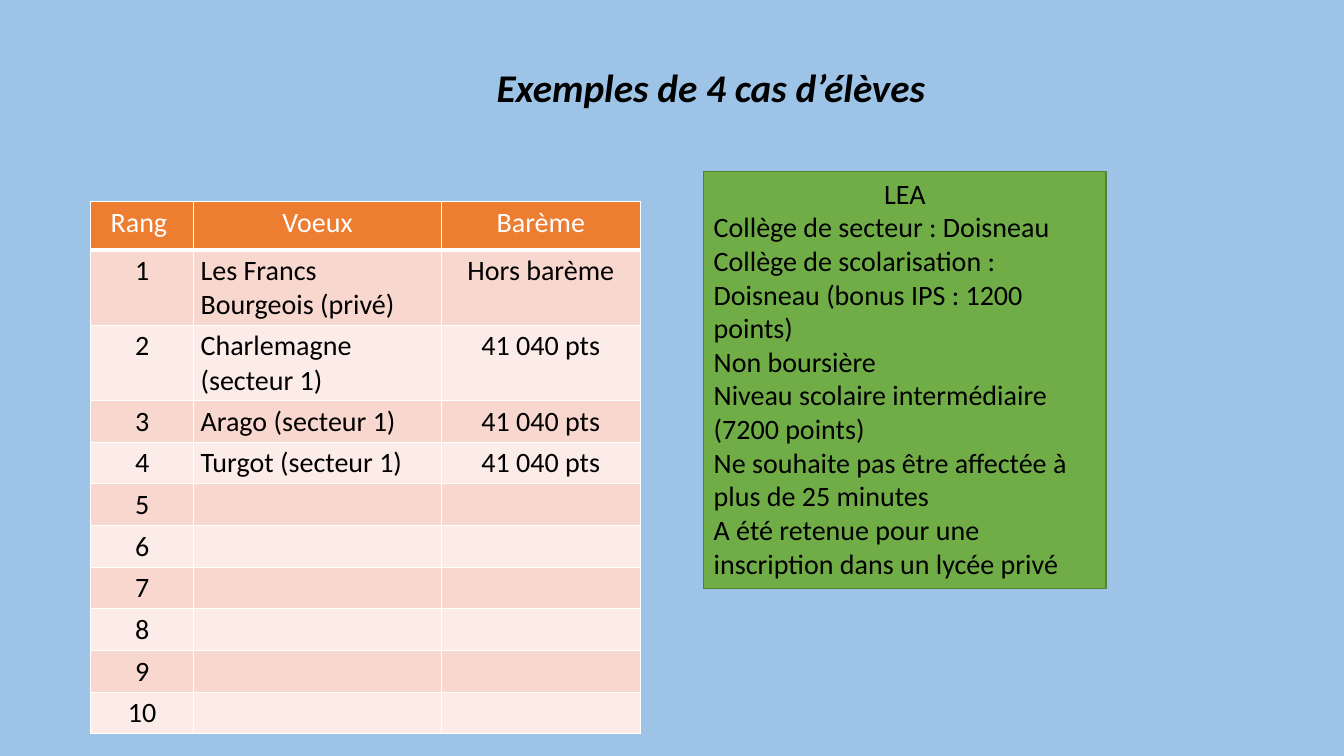
from lxml import etree
from pptx import Presentation
from pptx.dml.color import RGBColor
from pptx.enum.shapes import MSO_SHAPE as Shape
from pptx.enum.text import MSO_ANCHOR as Anchor, PP_ALIGN as Align
from pptx.oxml.ns import qn
from pptx.util import Inches, Pt

# Content
TITLE = "Exemples de 4 cas d’élèves"
HEADER = ("Rang ", "Voeux", "Barème")
WISHES = [
    ("Les Francs Bourgeois (privé)", "Hors barème"),
    ("Charlemagne (secteur 1)", "41 040 pts"),
    ("Arago (secteur 1)", "41 040 pts"),
    ("Turgot (secteur 1)", "41 040 pts"),
]
RANKS = 10
PUPIL = "LEA"
PROFILE = [
    "Collège de secteur : Doisneau",
    "Collège de scolarisation : Doisneau (bonus IPS : 1200 points)",
    "Non boursière",
    "Niveau scolaire intermédiaire (7200 points)",
    "Ne souhaite pas être affectée à plus de 25 minutes",
    "A été retenue pour une inscription dans un lycée privé",
]

# Formats
COLORS = {
    "page": "9DC3E6", "text": "000000", "header_text": "FFFFFF",
    "header": "ED7D31", "odd": "F8D7CE", "even": "FCECE8",
    "border": "FFFFFF", "card": "70AD47", "card_line": "538035",
}
BODY = {"name": "Calibri", "size": Pt(20), "bold": False}
HEADING = {"name": "Calibri", "size": Pt(28), "bold": True, "italic": True}
CELL = {
    "margin_left": Inches(0.07), "margin_right": Inches(0.07),
    "margin_top": Inches(0.04), "margin_bottom": Inches(0.04),
}
COLUMN_WIDTHS = (1.02, 2.46, 1.97)
HEADER_HEIGHT, LINE_HEIGHT = 0.48, 0.31


def color(name):
    return RGBColor.from_string(COLORS[name])


def apply(target, formats):
    for name, value in formats.items():
        setattr(target, name, value)


def write(para, text, formats, align, ink="text"):
    para.alignment = align
    apply(para.font, formats)
    para.font.color.rgb = color(ink)
    if text:
        span = para.add_run()
        span.text = text
        apply(span.font, formats)
        span.font.color.rgb = color(ink)


def add_borders(cell, bottom_width):
    props = cell._tc.get_or_add_tcPr()
    for side, width in (("L", 1), ("R", 1), ("T", 1), ("B", bottom_width)):
        line = etree.SubElement(props, qn(f"a:ln{side}"), w=str(Pt(width)))
        fill = etree.SubElement(line, qn("a:solidFill"))
        etree.SubElement(fill, qn("a:srgbClr"), val=COLORS["border"])


deck = Presentation()
deck.slide_width, deck.slide_height = Inches(13.33), Inches(7.5)
page = deck.slides.add_slide(deck.slide_layouts[6])
page.background.fill.solid()
page.background.fill.fore_color.rgb = color("page")

# Title
title = page.shapes.add_textbox(Inches(3.12), Inches(0.56), Inches(7.86), Inches(0.67))
title.text_frame.word_wrap = True
title.text_frame.vertical_anchor = Anchor.MIDDLE
heading = title.text_frame.paragraphs[0]
heading.line_spacing = 0.9
write(heading, TITLE, HEADING, Align.CENTER)

# Pupil card
card = page.shapes.add_shape(
    Shape.RECTANGLE, Inches(6.98), Inches(1.7), Inches(3.99), Inches(4.14))
card.shadow.inherit = False
card.fill.solid()
card.fill.fore_color.rgb = color("card")
card.line.color.rgb = color("card_line")
card.line.width = Pt(1)
frame = card.text_frame
frame.word_wrap = True
frame.vertical_anchor = Anchor.TOP
write(frame.paragraphs[0], PUPIL, BODY, Align.CENTER)
for fact in PROFILE:
    write(frame.add_paragraph(), fact, BODY, Align.LEFT)

# Table of wishes: ranks without a wish stay blank
blanks = [("", "")] * (RANKS - len(WISHES))
rows = [HEADER] + [(str(rank), *wish) for rank, wish in enumerate(WISHES + blanks, 1)]
table = page.shapes.add_table(
    len(rows), len(HEADER), Inches(0.9), Inches(2),
    Inches(sum(COLUMN_WIDTHS)), Inches(HEADER_HEIGHT + RANKS * LINE_HEIGHT)).table
for column, width in zip(table.columns, COLUMN_WIDTHS):
    column.width = Inches(width)
for r, values in enumerate(rows):
    table.rows[r].height = Inches(LINE_HEIGHT if r else HEADER_HEIGHT)
    band = ("odd" if r % 2 else "even") if r else "header"
    for c, value in enumerate(values):
        cell = table.cell(r, c)
        apply(cell, CELL)
        add_borders(cell, 1 if r else 3)
        cell.fill.solid()
        cell.fill.fore_color.rgb = color(band)
        align = Align.LEFT if r and c == 1 else Align.CENTER
        write(cell.text_frame.paragraphs[0], value, BODY, align,
              "text" if r else "header_text")

deck.save("out.pptx")
